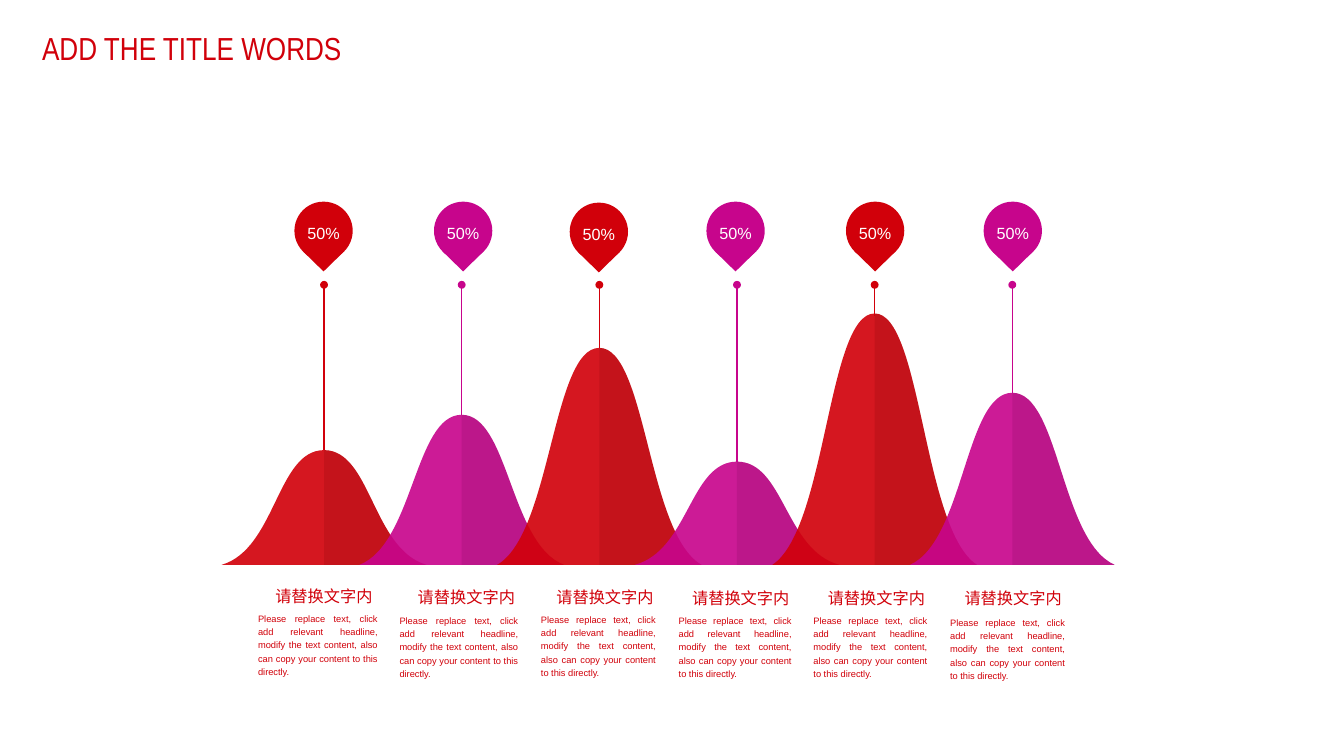
from collections import namedtuple

from lxml.etree import SubElement
from pptx import Presentation
from pptx.dml.color import RGBColor
from pptx.enum.shapes import MSO_CONNECTOR as CONN, MSO_SHAPE as SHAPE
from pptx.enum.text import MSO_ANCHOR as ANCHOR, MSO_AUTO_SIZE as AUTO, PP_ALIGN as ALIGN
from pptx.oxml.ns import qn
from pptx.util import Pt

PX = 9144
COLORS = {
    "red": "D1000A", "red_shade": "680005",
    "magenta": "C7058C", "magenta_shade": "640346",
    "white": "FFFFFF",
}
Box = namedtuple("Box", "x y w h")
Column = namedtuple("Column", "peak line_end drop heading body")

HEADING = "请替换文字内"
BODY = ("Please replace text, click add relevant headline, modify the text content, "
        "also can copy your content to this directly.")
FIRST_CENTER, PITCH = 339, 144
HILL_HALF, BASE, DOT_Y = 107, 591, 298

COLUMNS = [
    Column(471, 471, (308, 211), (288, 609), (270, 639, 125)),
    Column(434, 434, (454, 211), (437, 610), (418, 641, 124)),
    Column(364, 364, (596, 212), (582, 610), (566, 640, 120)),
    Column(483, 483, (739, 211), (724, 611), (710, 641, 118)),
    Column(328, 331, (885, 211), (866, 611), (851, 641, 119)),
    Column(411, 411, (1029, 211), (1009, 612), (994, 643, 120)),
]


def rgb(name):
    return RGBColor.from_string(COLORS[name])


def emu(*lengths):
    return [round(n * PX) for n in lengths]


def paint(sp, color, alpha=100):
    sp.shadow.inherit = False
    sp.fill.solid()
    sp.fill.fore_color.rgb = rgb(color)
    sp.line.fill.background()
    if alpha < 100:
        clr = sp.element.spPr.find(qn("a:solidFill")).find(qn("a:srgbClr"))
        SubElement(clr, qn("a:alpha"), val=str(alpha * 1000))


def outline(shapes, points, color, alpha=100):
    points = [emu(*pt) for pt in points]
    fb = shapes.build_freeform(*points[0], scale=1.0)
    fb.add_line_segments(points[1:], close=True)
    sp = fb.convert_to_shape()
    paint(sp, color, alpha)
    return sp


def bend(sp):
    lines = list(sp.element.spPr.iter(qn("a:lnTo")))
    for i in range(0, len(lines) - 2, 3):
        curve = SubElement(lines[i].getparent(), qn("a:cubicBezTo"))
        lines[i].addprevious(curve)
        for ln in lines[i:i + 3]:
            curve.append(ln[0])
            ln.getparent().remove(ln)


def write(tf, text, size, color, font="Arial", align=ALIGN.JUSTIFY, spacing=1.2):
    tf.text = text
    p = tf.paragraphs[0]
    p.alignment, p.line_spacing = align, spacing
    f = p.runs[0].font
    f.size, f.name, f.color.rgb = Pt(size), font, rgb(color)


def no_margins(tf):
    tf.margin_left = tf.margin_top = tf.margin_right = tf.margin_bottom = 0


def slope(box, side):
    middle, half = box.x + box.w / 2, side * box.w / 2
    return [(middle + half * dx, box.y + box.h * dy)
            for dx, dy in ((0, 0), (0.46, 0), (0.47, 0.86), (1, 1))]


def hill(s, box, color):
    shapes = s.shapes.add_group_shape().shapes
    left, right = slope(box, -1), slope(box, 1)[::-1]
    foot = (box.x + box.w / 2, box.y + box.h)
    bend(outline(shapes, left + [foot] * 3 + right[:1] * 2 + right, color, 91))
    bend(outline(shapes, right + [foot] * 3 + right[:1], color + "_shade", 15))


def drop(s, box, color):
    shapes = s.shapes.add_group_shape().shapes
    sp = shapes.add_shape(SHAPE.OVAL, *emu(box.x, box.y, box.w, box.w))
    paint(sp, color)
    tf = sp.text_frame
    no_margins(tf)
    tf.vertical_anchor = ANCHOR.MIDDLE
    write(tf, "50%", 12.2, "white", align=ALIGN.CENTER)
    inset, top = 9, box.y + 52
    outline(shapes, [(box.x + box.w - inset, top), (box.x + box.w / 2, box.y + box.h),
                     (box.x + inset, top)], color)


def stem(s, x, top, bottom, color):
    line = s.shapes.add_connector(CONN.STRAIGHT, *emu(x, top, x, bottom))
    line.line.color.rgb = rgb(color)
    line.line.width = Pt(1)
    props = line.element.spPr
    SubElement(props.find(qn("a:ln")), qn("a:headEnd"), type="oval")
    SubElement(props, qn("a:effectLst"))


def label(shapes, box, text, size, wrap):
    tf = shapes.add_textbox(*emu(*box)).text_frame
    no_margins(tf)
    tf.word_wrap, tf.auto_size = wrap, AUTO.SHAPE_TO_FIT_TEXT
    write(tf, text, size, "red")


def caption(s, heading, body):
    shapes = s.shapes.add_group_shape().shapes
    label(shapes, Box(*heading, 102, 22), HEADING, 12.2, False)
    label(shapes, Box(*body, 70), BODY, 7, True)


def title(s, box):
    sp = s.shapes.title
    sp.left, sp.top, sp.width, sp.height = emu(*box)
    tf = sp.text_frame
    tf.word_wrap, tf.auto_size = True, AUTO.SHAPE_TO_FIT_TEXT
    tf.vertical_anchor = ANCHOR.TOP
    write(tf, "ADD THE TITLE WORDS", 24, "red", "Arial Narrow", ALIGN.LEFT, 1.5)


def hill_chart(s):
    items = [(FIRST_CENTER + PITCH * i, ("red", "magenta")[i % 2], col)
             for i, col in enumerate(COLUMNS)]
    for x, color, col in items:
        hill(s, Box(x - HILL_HALF, col.peak, 2 * HILL_HALF, BASE - col.peak), color)
    for x, color, col in items:
        drop(s, Box(*col.drop, 61, 73), color)
        stem(s, x, DOT_Y, col.line_end, color)
        caption(s, col.heading, col.body)


def main():
    prs = Presentation()
    prs.slide_width, prs.slide_height = emu(1406, 791)
    s = prs.slides.add_slide(prs.slide_layouts[5])
    title(s, Box(34, 5, 354, 63))
    hill_chart(s)
    prs.save("out.pptx")


if __name__ == "__main__":
    main()
